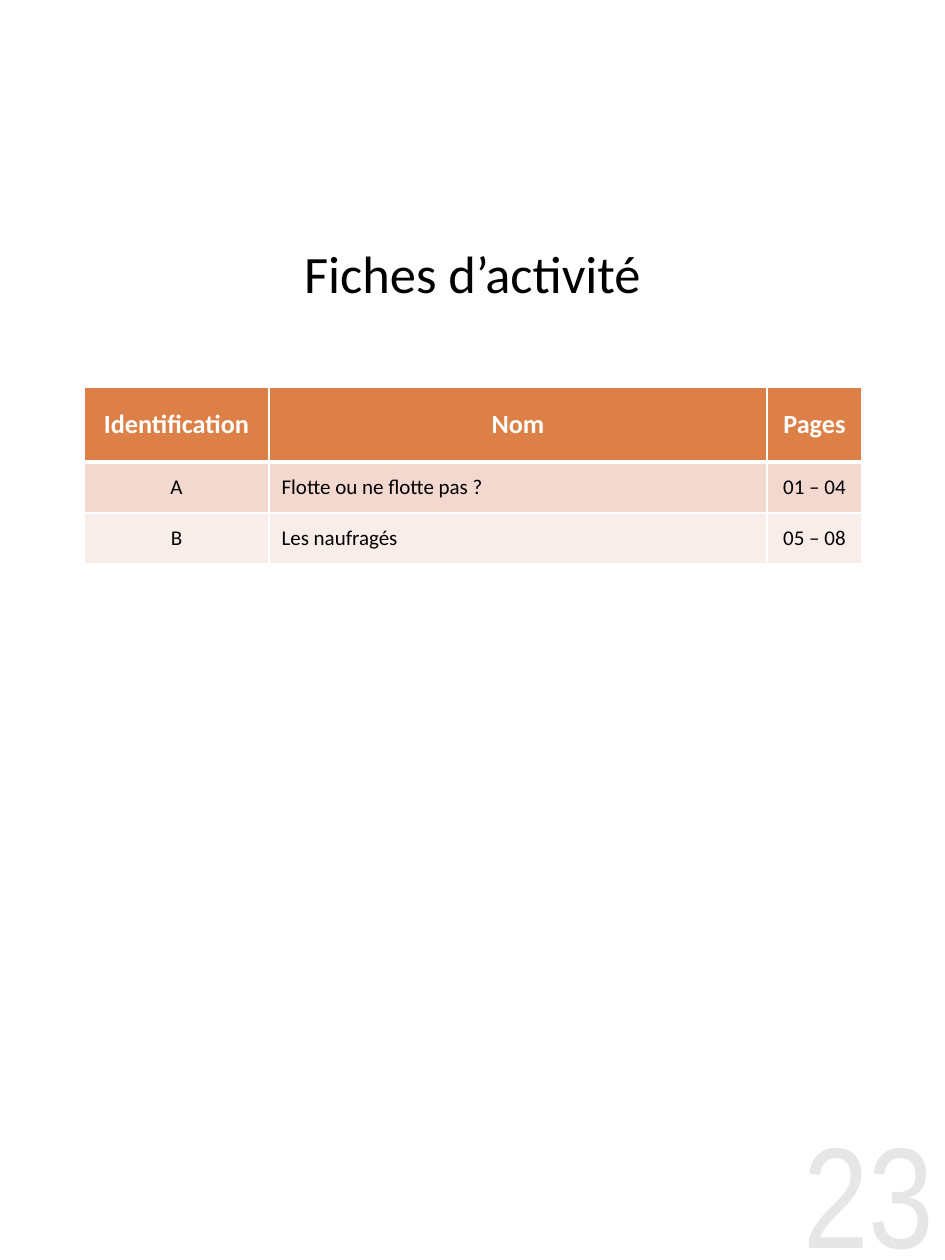
import pptx
import pptx.dml.color
import pptx.enum.text
import pptx.oxml
import pptx.oxml.ns
import pptx.util

PX = 914400 / 126
THEME = {
    "font": "Calibri", "number_font": "Arial Narrow",
    "title_size": 30, "header_size": 15, "body_size": 12, "number_size": 82,
    "black": "000000", "white": "FFFFFF", "number": "E6E6E6",
    "header": "DD8047", "bands": ["F2D8CF", "F9EDE9"],
}
CENTER = pptx.enum.text.PP_ALIGN.CENTER
LEFT = pptx.enum.text.PP_ALIGN.LEFT
RIGHT = pptx.enum.text.PP_ALIGN.RIGHT
MIDDLE = pptx.enum.text.MSO_ANCHOR.MIDDLE
TOP = pptx.enum.text.MSO_ANCHOR.TOP


def px(value):
    return pptx.util.Emu(round(value * PX))


def write(text_frame, text, alignment, color, font_format):
    """Fill the first paragraph and format it."""
    paragraph = text_frame.paragraphs[0]
    paragraph.text = text
    paragraph.alignment = alignment
    for name, value in font_format.items():
        setattr(paragraph.font, name, value)
    paragraph.font.color.rgb = pptx.dml.color.RGBColor.from_string(color)


presentation = pptx.Presentation()
presentation.slide_width = px(945)
presentation.slide_height = px(1260)
slide = presentation.slides.add_slide(presentation.slide_layouts[6])

# Title and page number
text_boxes = [
    ("Fiches d’activité", (136, 212, 673, 120), CENTER, MIDDLE, THEME["black"],
     {"name": THEME["font"], "size": pptx.util.Pt(THEME["title_size"])}),
    ("23", (756, 1105, 178, 155), RIGHT, TOP, THEME["number"],
     {"name": THEME["number_font"], "size": pptx.util.Pt(THEME["number_size"])}),
]
for text, box, alignment, anchor, color, font_format in text_boxes:
    text_frame = slide.shapes.add_textbox(*map(px, box)).text_frame
    frame_format = {"word_wrap": True, "vertical_anchor": anchor, "margin_left": 0,
                    "margin_top": 0, "margin_right": 0, "margin_bottom": 0}
    for name, value in frame_format.items():
        setattr(text_frame, name, value)
    write(text_frame, text, alignment, color, font_format)

# Table of activity sheets
rows = [
    ("Identification", "Nom", "Pages"),
    ("A", "Flotte ou ne flotte pas ?", "01 – 04"),
    ("B", "Les naufragés", "05 – 08"),
]
column_widths = [185, 498, 95]
row_heights = [75, 51, 51]
table = slide.shapes.add_table(
    len(rows), len(column_widths), px(84), px(387),
    px(sum(column_widths)), px(sum(row_heights))).table
for column, width in zip(table.columns, column_widths):
    column.width = px(width)
for row, height in zip(table.rows, row_heights):
    row.height = px(height)

for row_index, texts in enumerate(rows):
    is_header = row_index == 0
    fill = THEME["header"] if is_header else THEME["bands"][row_index - 1]
    color = THEME["white"] if is_header else THEME["black"]
    size = THEME["header_size"] if is_header else THEME["body_size"]
    border_widths = {"lnL": 1, "lnR": 1, "lnT": 3 if row_index == 1 else 1,
                     "lnB": 3 if is_header else 1}
    for column_index, text in enumerate(texts):
        cell = table.cell(row_index, column_index)
        cell.vertical_anchor = MIDDLE
        alignment = LEFT if column_index == 1 and not is_header else CENTER
        write(cell.text_frame, text, alignment, color,
              {"name": THEME["font"], "size": pptx.util.Pt(size), "bold": is_header})
        properties = cell._tc.get_or_add_tcPr()
        for tag, width in border_widths.items():
            properties.append(pptx.oxml.parse_xml(
                f'<a:{tag} {pptx.oxml.ns.nsdecls("a")} w="{pptx.util.Pt(width)}">'
                f'<a:solidFill><a:srgbClr val="{THEME["white"]}"/></a:solidFill></a:{tag}>'))
        cell.fill.solid()
        cell.fill.fore_color.rgb = pptx.dml.color.RGBColor.from_string(fill)

presentation.save("out.pptx")
